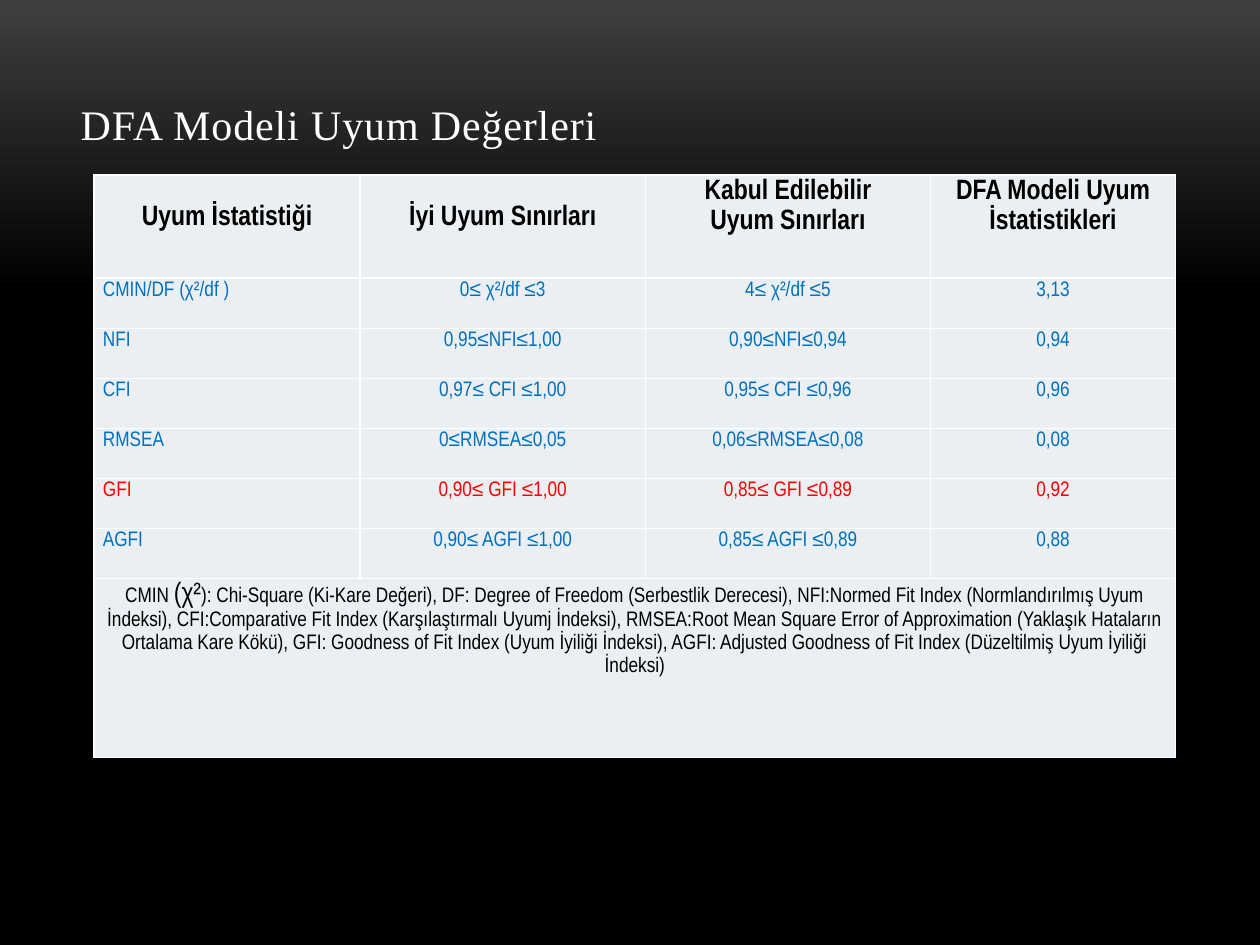
from copy import deepcopy

from lxml import etree
from pptx import Presentation
from pptx.dml.color import RGBColor
from pptx.enum import text
from pptx.oxml import ns
from pptx.util import Pt


class Theme:
    white = RGBColor(0xFF, 0xFF, 0xFF)
    black = RGBColor(0, 0, 0)
    grey = RGBColor(0x3F, 0x3F, 0x3F)
    cell = RGBColor(0xEC, 0xEF, 0xF1)
    blue = RGBColor(0x00, 0x70, 0xC0)
    red = RGBColor(0xFF, 0, 0)
    title_font, table_font = "Times New Roman", "Arial Narrow"
    title_size, header_size, body_size = Pt(24), Pt(16), Pt(12)


def style_cell(cell):
    """Give a cell its fill, margins and thin white borders."""
    cell.fill.solid()
    cell.fill.fore_color.rgb = Theme.cell
    cell.margin_left = cell.margin_right = Pt(5)
    cell.margin_top = cell.margin_bottom = Pt(0)
    properties = cell._tc.get_or_add_tcPr()
    for place, side in enumerate(("lnL", "lnR", "lnT", "lnB")):
        border = etree.Element(ns.qn(f"a:{side}"), w=str(Pt(1)))
        fill = etree.SubElement(border, ns.qn("a:solidFill"))
        etree.SubElement(fill, ns.qn("a:srgbClr"), val=str(Theme.white))
        properties.insert(place, border)


def style_para(para, size, color, bold=False, align=text.PP_ALIGN.CENTER):
    para.alignment = align
    para.line_spacing = 1.15
    para.font.name = Theme.table_font
    para.font.size = size
    para.font.bold = bold
    para.font.color.rgb = color


deck = Presentation()
deck.slide_width, deck.slide_height = Pt(720), Pt(540)
page = deck.slides.add_slide(deck.slide_layouts[5])

# Background: grey fading to black in the top third
backdrop = page.background.fill
backdrop.gradient()
backdrop.gradient_angle = 270
stop_list = page.element.xpath(".//a:gsLst")[0]
stop_list.append(deepcopy(stop_list[-1]))
stops = ((0, Theme.grey), (0.31, Theme.black), (1, Theme.black))
for stop, (position, color) in zip(backdrop.gradient_stops, stops):
    stop.position = position
    stop.color.rgb = color

# Title
title = page.shapes.title
title.left, title.top, title.width, title.height = Pt(38.9), Pt(25.9), Pt(648), Pt(62.6)
frame = title.text_frame
frame.text = "DFA Modeli Uyum Değerleri"
frame.auto_size = text.MSO_AUTO_SIZE.NONE
frame.vertical_anchor = text.MSO_ANCHOR.BOTTOM
para = frame.paragraphs[0]
para.alignment = text.PP_ALIGN.LEFT
para.font.name = Theme.title_font
para.font.size = Theme.title_size
para.font.color.rgb = Theme.white
para.runs[0].font._element.set("spc", "50")

# Table grid
headers = ["Uyum İstatistiği", "İyi Uyum Sınırları",
           "Kabul Edilebilir\nUyum Sınırları", "DFA Modeli Uyum İstatistikleri"]
fit_rows = [
    ["CMIN/DF (χ²/df )", "0≤ χ²/df ≤3", "4≤ χ²/df ≤5", "3,13"],
    ["NFI", "0,95≤NFI≤1,00", "0,90≤NFI≤0,94", "0,94"],
    ["CFI", "0,97≤ CFI ≤1,00", "0,95≤ CFI ≤0,96", "0,96"],
    ["RMSEA", "0≤RMSEA≤0,05", "0,06≤RMSEA≤0,08", "0,08"],
    ["GFI", "0,90≤ GFI ≤1,00", "0,85≤ GFI ≤0,89", "0,92"],
    ["AGFI", "0,90≤ AGFI ≤1,00", "0,85≤ AGFI ≤0,89", "0,88"],
]
widths = [152, 163, 163, 140]
heights = [59] + [28.6] * len(fit_rows) + [102.4]
table = page.shapes.add_table(len(heights), len(widths), Pt(53.8), Pt(100),
                              Pt(sum(widths)), Pt(sum(heights))).table
table.first_row = table.horz_banding = False
for column, width in zip(table.columns, widths):
    column.width = Pt(width)
for row, height in zip(table.rows, heights):
    row.height = Pt(height)
for cell in table.iter_cells():
    style_cell(cell)

# Header row: the first two labels sit one line lower
for index, label in enumerate(headers):
    cell = table.cell(0, index)
    cell.text = label
    if index < 2:
        cell.margin_top = Pt(15)
    for para in cell.text_frame.paragraphs:
        style_para(para, Theme.header_size, Theme.black, bold=True)

# Fit indices, with GFI picked out in red
for row_index, values in enumerate(fit_rows, start=1):
    color = Theme.red if values[0] == "GFI" else Theme.blue
    for index, value in enumerate(values):
        cell = table.cell(row_index, index)
        cell.text = value
        align = text.PP_ALIGN.CENTER if index else text.PP_ALIGN.LEFT
        style_para(cell.text_frame.paragraphs[0], Theme.body_size, color, align=align)

# Abbreviations in one merged row
last = len(heights) - 1
note = table.cell(last, 0)
note.merge(table.cell(last, len(widths) - 1))
para = note.text_frame.paragraphs[0]
style_para(para, Theme.body_size, Theme.black)
note_parts = [
    ("CMIN ", Theme.body_size),
    ("(χ²", Theme.header_size),
    ("): Chi-Square (Ki-Kare Değeri), DF: Degree of Freedom (Serbestlik Derecesi), "
     "NFI:Normed Fit Index (Normlandırılmış Uyum İndeksi), "
     "CFI:Comparative Fit Index (Karşılaştırmalı Uyumj İndeksi), "
     "RMSEA:Root Mean Square Error of Approximation (Yaklaşık Hataların Ortalama Kare Kökü), "
     "GFI: Goodness of Fit Index (Uyum İyiliği İndeksi), "
     "AGFI: Adjusted Goodness of Fit Index (Düzeltilmiş Uyum İyiliği İndeksi)", Theme.body_size),
]
for wording, size in note_parts:
    span = para.add_run()
    span.text = wording
    span.font.size = size

deck.save("out.pptx")
